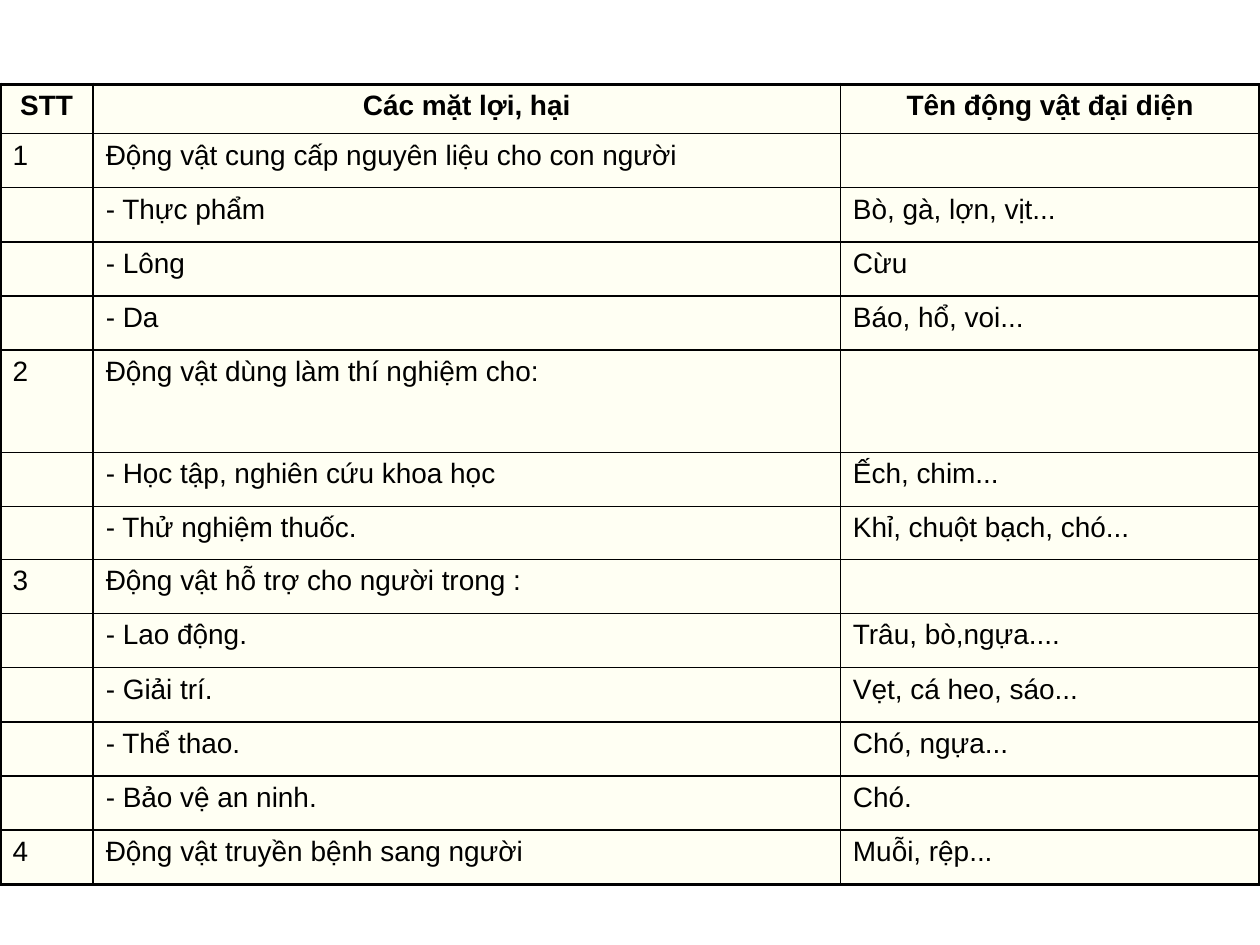
import dataclasses

import lxml.etree
import pptx
import pptx.dml.color
import pptx.enum.text
import pptx.oxml.ns
import pptx.util

Inches = pptx.util.Inches
Pt = pptx.util.Pt
ALIGN = pptx.enum.text.PP_ALIGN

COLORS = {"ink": "000000", "cell": "FFFFF3"}
WIDTHS = [0.74, 5.93, 3.33]
THICK, THIN = 2.25, 1


@dataclasses.dataclass
class Row:
    num: str
    use: str
    names: str
    height: float = 0.43


ROWS = [
    Row("STT", "Các mặt lợi, hại", "Tên động vật đại diện", 0.39),
    Row("1", "Động vật cung cấp nguyên liệu cho con người", ""),
    Row("", "- Thực phẩm", "Bò, gà, lợn, vịt..."),
    Row("", "- Lông", "Cừu"),
    Row("", "- Da", "Báo, hổ, voi..."),
    Row("2", "Động vật dùng làm thí nghiệm cho:", "", 0.81),
    Row("", "- Học tập, nghiên cứu khoa học", "Ếch, chim..."),
    Row("", "- Thử nghiệm thuốc.", "Khỉ, chuột bạch, chó...", 0.42),
    Row("3", "Động vật hỗ trợ cho người trong :", ""),
    Row("", "- Lao động.", "Trâu, bò,ngựa...."),
    Row("", "- Giải trí.", "Vẹt, cá heo, sáo..."),
    Row("", "- Thể thao.", "Chó, ngựa..."),
    Row("", "- Bảo vệ an ninh.", "Chó."),
    Row("4", "Động vật truyền bệnh sang người", "Muỗi, rệp..."),
]


def color(name: str) -> pptx.dml.color.RGBColor:
    return pptx.dml.color.RGBColor.from_string(COLORS[name])


def write(frame, text: str, *, size: float = 16, bold: bool = False,
          align=ALIGN.LEFT, ink: str = "ink") -> None:
    para = frame.paragraphs[0]
    para.alignment = align
    para.space_before = Pt(size * 0.2)
    para.font.size = Pt(size)
    if text:
        run = para.add_run()
        run.text = text
        run.font.name = "Arial"
        run.font.size = Pt(size)
        run.font.bold = bold
        run.font.color.rgb = color(ink)


def border(cell, edges: dict[str, bool]) -> None:
    qn = pptx.oxml.ns.qn
    props = cell._tc.get_or_add_tcPr()
    for side, outer in edges.items():
        width = Pt(THICK if outer else THIN)
        line = lxml.etree.SubElement(props, qn(f"a:ln{side}"), w=str(width))
        fill = lxml.etree.SubElement(line, qn("a:solidFill"))
        lxml.etree.SubElement(fill, qn("a:srgbClr"), val=COLORS["ink"])


def draw(slide, rows: list[Row]) -> None:
    total = sum(row.height for row in rows)
    frame = slide.shapes.add_table(
        len(rows), len(WIDTHS), Inches(0), Inches(0.67),
        Inches(sum(WIDTHS)), Inches(total))
    table = frame.table
    for col, width in zip(table.columns, WIDTHS):
        col.width = Inches(width)
    for i, row in enumerate(rows):
        table.rows[i].height = Inches(row.height)
        head = i == 0
        for j, text in enumerate((row.num, row.use, row.names)):
            cell = table.cell(i, j)
            border(cell, {"L": j == 0, "R": j == len(WIDTHS) - 1,
                          "T": head, "B": i == len(rows) - 1})
            cell.fill.solid()
            cell.fill.fore_color.rgb = color("cell")
            write(cell.text_frame, text, bold=head,
                  align=ALIGN.CENTER if head else ALIGN.LEFT)


def main() -> None:
    deck = pptx.Presentation()
    deck.slide_width = Inches(10)
    deck.slide_height = Inches(7.5)
    slide = deck.slides.add_slide(deck.slide_layouts[6])
    draw(slide, ROWS)
    deck.save("out.pptx")


if __name__ == "__main__":
    main()
